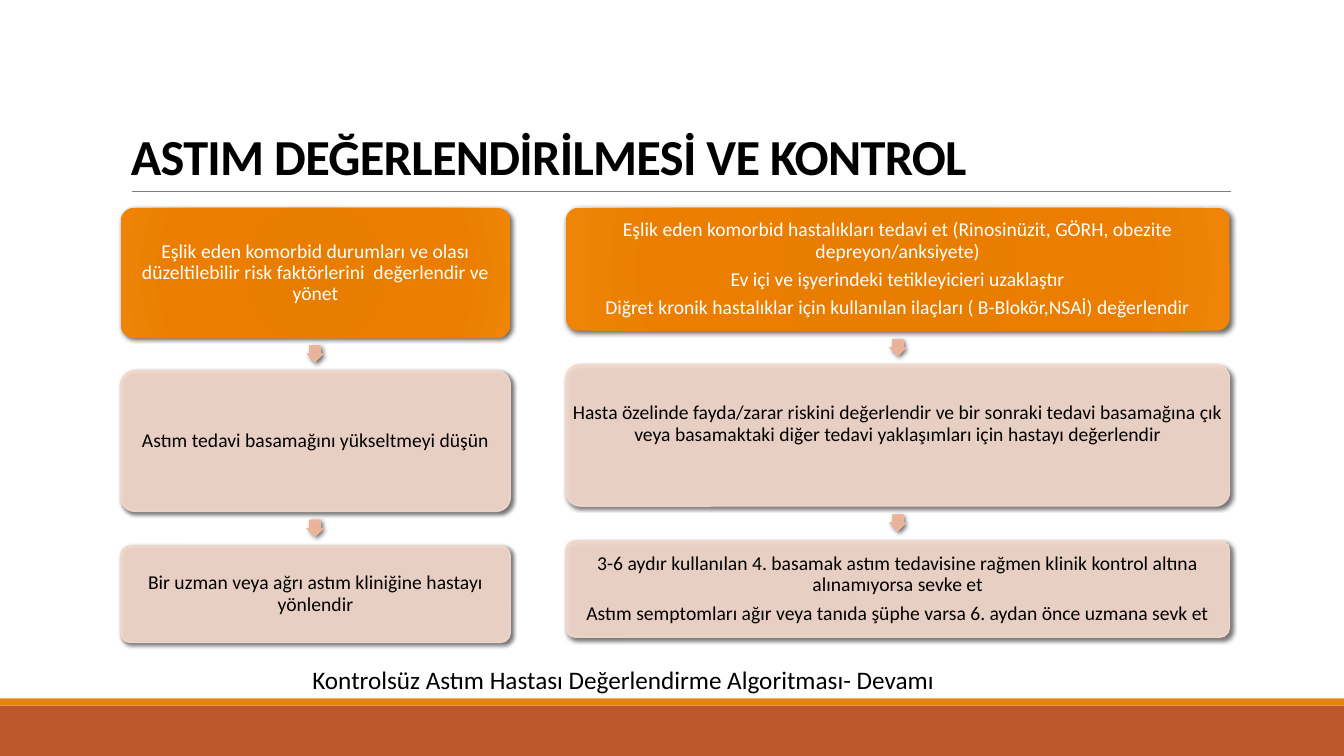
"""Build the asthma assessment and control slide with two step-by-step columns."""
import dataclasses

import lxml.etree
import pptx
import pptx.dml.color
import pptx.enum.shapes
import pptx.enum.text
import pptx.oxml.ns
import pptx.util

RGBColor = pptx.dml.color.RGBColor
Shapes = pptx.enum.shapes.MSO_SHAPE
Anchor = pptx.enum.text.MSO_ANCHOR
Align = pptx.enum.text.PP_ALIGN
qn = pptx.oxml.ns.qn

BLACK = RGBColor(0x00, 0x00, 0x00)
WHITE = RGBColor(0xFF, 0xFF, 0xFF)
GREY = RGBColor(0x80, 0x80, 0x80)
RUST = RGBColor(0xBD, 0x58, 0x2C)
ORANGE = RGBColor(0xE4, 0x83, 0x12)
BLUSH = RGBColor(0xF5, 0xD9, 0xCC)
HEAD_GLOW = (
    RGBColor(0xE5, 0x7B, 0x00), RGBColor(0xE8, 0x7D, 0x00),
    RGBColor(0xEB, 0x7E, 0x00), RGBColor(0xEF, 0x84, 0x07),
)
ARROW_GLOW = (
    RGBColor(0xE8, 0xB1, 0x96), RGBColor(0xE9, 0xB3, 0x99),
    RGBColor(0xEE, 0xB5, 0x9A), RGBColor(0xF3, 0xC0, 0xA8),
)
GLOW_STOPS = (0, 34, 70, 100)
FONT = "Calibri"
ARROW_SIZE = 16
INSET = 2


@dataclasses.dataclass(frozen=True)
class Step:
    top: int
    height: int
    lines: tuple[str, ...]
    extra_bottom: int = 0

    @property
    def bottom(self) -> int:
        return self.top + self.height


@dataclasses.dataclass(frozen=True)
class Column:
    left: int
    width: int
    steps: tuple[Step, ...]


@dataclasses.dataclass(frozen=True)
class Band:
    top: int
    height: int
    color: RGBColor


BANDS = (Band(672, 48, RUST), Band(665, 7, ORANGE))

COLUMNS = (
    Column(115, 371, (
        Step(198, 124, (
            "Eşlik eden komorbid durumları ve olası düzeltilebilir risk "
            "faktörlerini  değerlendir ve yönet",
        )),
        Step(353, 134, ("Astım tedavi basamağını yükseltmeyi düşün",)),
        Step(520, 92, ("Bir uzman veya ağrı astım kliniğine hastayı yönlendir",)),
    )),
    Column(539, 632, (
        Step(198, 117, (
            "Eşlik eden komorbid hastalıkları tedavi et (Rinosinüzit, GÖRH, "
            "obezite depreyon/anksiyete)",
            "Ev içi ve işyerindeki tetikleyicieri uzaklaştır",
            "Diğret kronik hastalıklar için kullanılan ilaçları "
            "( B-Blokör,NSAİ) değerlendir",
        )),
        Step(347, 135, (
            "Hasta özelinde fayda/zarar riskini değerlendir ve bir sonraki tedavi "
            "basamağına çık veya basamaktaki diğer tedavi yaklaşımları için "
            "hastayı değerlendir",
        ), extra_bottom=21),
        Step(515, 92, (
            "3-6 aydır kullanılan 4. basamak astım tedavisine rağmen klinik "
            "kontrol altına alınamıyorsa sevke et",
            "Astım semptomları ağır veya tanıda şüphe varsa 6. aydan önce "
            "uzmana sevk et",
        )),
    )),
)


def px(length: int) -> pptx.util.Emu:
    return pptx.util.Emu(length * 9525)


def write_text(frame, *lines: str, size: int, color: RGBColor = BLACK,
               bold: bool = False, align=Align.LEFT, anchor=Anchor.TOP,
               wrap: bool = True, line_spacing: float = 1.0,
               space_after: int = 0, tracking: int = 0) -> None:
    frame.auto_size = pptx.enum.text.MSO_AUTO_SIZE.NONE
    frame.word_wrap = wrap
    frame.vertical_anchor = anchor
    for index, line in enumerate(lines):
        para = frame.add_paragraph() if index else frame.paragraphs[0]
        para.alignment = align
        para.line_spacing = line_spacing
        para.space_before = pptx.util.Pt(0)
        para.space_after = pptx.util.Pt(space_after)
        span = para.add_run()
        span.text = line
        span.font.name = FONT
        span.font.size = pptx.util.Pt(size)
        span.font.bold = bold
        span.font.color.rgb = color
        if tracking:
            span.font._element.set("spc", str(tracking))


def add_plain_shape(page, preset, left: int, top: int, width: int, height: int):
    shape = page.shapes.add_shape(preset, px(left), px(top), px(width), px(height))
    shape.shadow.inherit = False
    shape.line.fill.background()
    return shape


def fill_glow(shape, colors: tuple[RGBColor, ...]) -> None:
    shape.fill.gradient()
    gradient = shape._element.spPr.find(qn("a:gradFill"))
    gradient.clear()
    stops = lxml.etree.SubElement(gradient, qn("a:gsLst"))
    for position, color in zip(GLOW_STOPS, colors):
        stop = lxml.etree.SubElement(stops, qn("a:gs"), pos=str(position * 1000))
        lxml.etree.SubElement(stop, qn("a:srgbClr"), val=str(color))
    circle = lxml.etree.SubElement(gradient, qn("a:path"), {"path": "circle"})
    lxml.etree.SubElement(circle, qn("a:fillToRect"),
                          {side: "100000" for side in "ltrb"})


def fill_blush(shape) -> None:
    shape.fill.solid()
    shape.fill.fore_color.rgb = BLUSH
    shape.line.color.rgb = BLUSH
    shape.line.width = pptx.util.Pt(1)
    for color in shape._element.spPr.iter(qn("a:srgbClr")):
        lxml.etree.SubElement(color, qn("a:alpha"), val="90000")


def cast_shadow(shape, blur: float) -> None:
    effects = shape._element.spPr.find(qn("a:effectLst"))
    shadow = lxml.etree.SubElement(
        effects, qn("a:outerShdw"), blurRad=str(pptx.util.Pt(blur)),
        dist=str(pptx.util.Pt(2)), dir="2700000", rotWithShape="0")
    color = lxml.etree.SubElement(shadow, qn("a:srgbClr"), val=str(BLACK))
    lxml.etree.SubElement(color, qn("a:alpha"), val="60000")


def add_step(page, column: Column, step: Step, is_head: bool) -> None:
    box = add_plain_shape(page, Shapes.ROUNDED_RECTANGLE, column.left, step.top,
                          column.width, step.height)
    box.adjustments[0] = 0.1
    if is_head:
        fill_glow(box, HEAD_GLOW)
    else:
        fill_blush(box)
    cast_shadow(box, 3.5 if is_head else 3)
    frame = box.text_frame
    frame.margin_left = frame.margin_right = frame.margin_top = px(INSET)
    frame.margin_bottom = px(INSET + step.extra_bottom)
    write_text(frame, *step.lines, size=14, color=WHITE if is_head else BLACK,
               align=Align.CENTER, anchor=Anchor.MIDDLE, line_spacing=0.9,
               space_after=5)


def add_arrow(page, column: Column, upper: Step, lower: Step) -> None:
    left = column.left + (column.width - ARROW_SIZE) // 2
    top = (upper.bottom + lower.top - ARROW_SIZE) // 2
    arrow = add_plain_shape(page, Shapes.DOWN_ARROW, left, top, ARROW_SIZE, ARROW_SIZE)
    arrow.adjustments[0] = 0.67
    arrow.adjustments[1] = 0.5
    fill_glow(arrow, ARROW_GLOW)
    cast_shadow(arrow, 3.5)


def add_title(page) -> None:
    title = page.shapes.title
    title.left, title.top, title.width, title.height = map(px, (115, 30, 1056, 152))
    write_text(title.text_frame, "ASTIM DEĞERLENDİRİLMESİ VE KONTROL", size=36,
               bold=True, anchor=Anchor.BOTTOM, line_spacing=0.85, tracking=-50)
    rule = page.shapes.add_connector(pptx.enum.shapes.MSO_CONNECTOR.STRAIGHT,
                                     px(126), px(182), px(1172), px(182))
    rule.line.color.rgb = GREY
    rule.line.width = pptx.util.Pt(0.5)
    lxml.etree.SubElement(rule._element.spPr, qn("a:effectLst"))


def main() -> None:
    deck = pptx.Presentation()
    deck.slide_width, deck.slide_height = px(1280), px(720)
    page = deck.slides.add_slide(deck.slide_layouts.get_by_name("Title Only"))
    for band in BANDS:
        bar = add_plain_shape(page, Shapes.RECTANGLE, 0, band.top, 1280, band.height)
        bar.fill.solid()
        bar.fill.fore_color.rgb = band.color
    add_title(page)
    for column in COLUMNS:
        for index, step in enumerate(column.steps):
            if index:
                add_arrow(page, column, column.steps[index - 1], step)
            add_step(page, column, step, is_head=index == 0)
    caption = page.shapes.add_textbox(px(288), px(628), px(612), px(38))
    write_text(caption.text_frame,
               "Kontrolsüz Astım Hastası Değerlendirme Algoritması- Devamı",
               size=18, wrap=False)
    deck.save("out.pptx")


if __name__ == "__main__":
    main()
